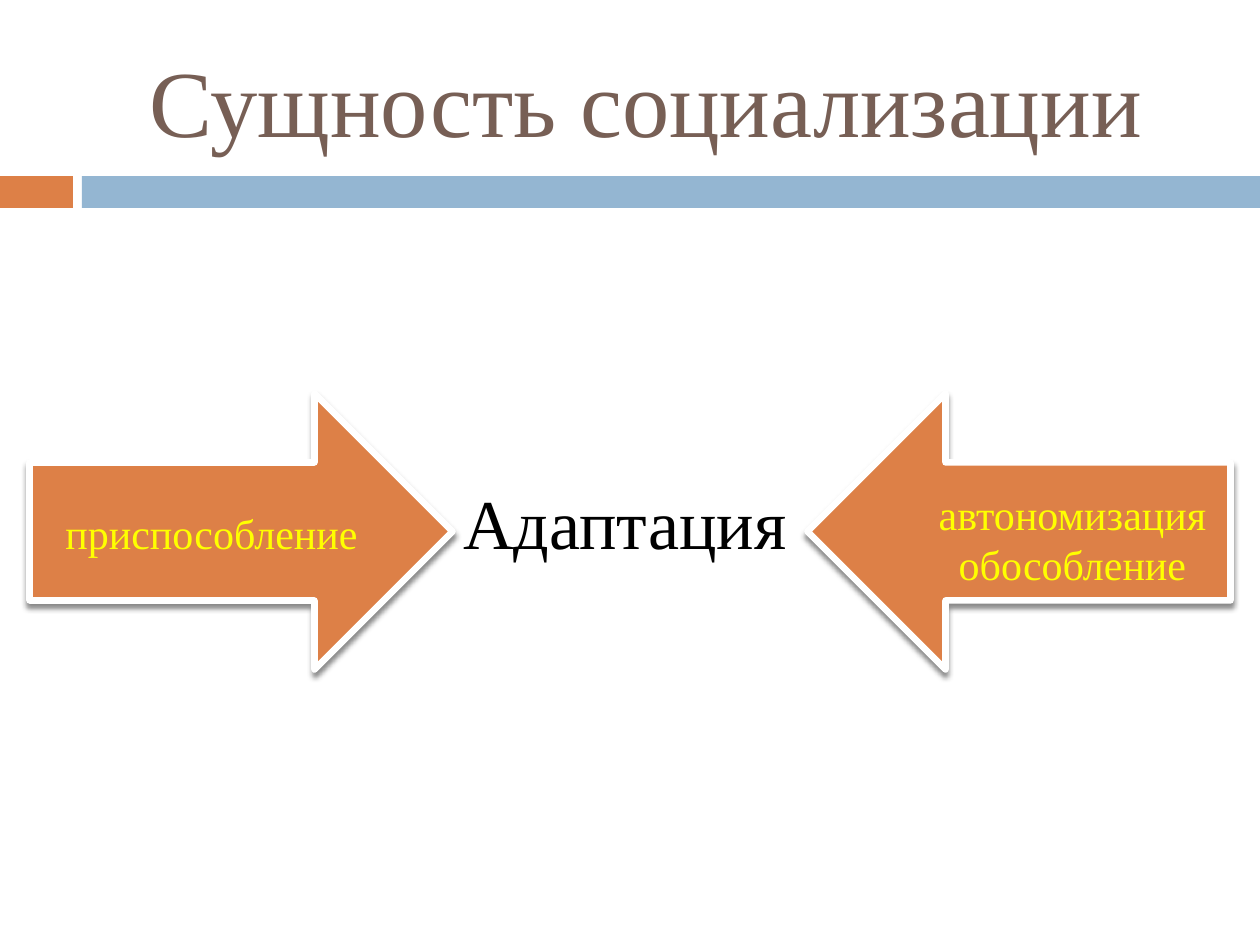
from lxml.etree import SubElement
from pptx import Presentation
from pptx.dml.color import RGBColor
from pptx.enum.shapes import MSO_SHAPE as Shape
from pptx.enum.text import MSO_ANCHOR as Anchor, MSO_AUTO_SIZE as AutoSize, PP_ALIGN as Align
from pptx.oxml.ns import qn
from pptx.util import Pt

PX = 914400 // 126
ORANGE = RGBColor(0xDD, 0x80, 0x47)
BLUE = RGBColor(0x94, 0xB6, 0xD2)
BROWN = RGBColor(0x77, 0x5F, 0x55)
YELLOW = RGBColor(0xFF, 0xFF, 0x00)
BLACK = RGBColor(0x00, 0x00, 0x00)
WHITE = RGBColor(0xFF, 0xFF, 0xFF)

prs = Presentation()
prs.slide_width, prs.slide_height = 1260 * PX, 945 * PX
slide = prs.slides.add_slide(prs.slide_layouts[6])


def add_filled(kind, box, color):
    shape = slide.shapes.add_shape(kind, *(n * PX for n in box))
    shape.shadow.inherit = False
    shape.fill.solid()
    shape.fill.fore_color.rgb = color
    shape.line.fill.background()
    return shape


def drop_shadow(shape):
    """Put a soft black shadow straight below the shape."""
    effects = shape._element.spPr.find(qn("a:effectLst"))
    shadow = SubElement(effects, qn("a:outerShdw"), blurRad=str(Pt(3)), dist=str(Pt(2.4)),
                        dir="5400000", rotWithShape="0")
    black = SubElement(shadow, qn("a:srgbClr"), val="000000")
    SubElement(black, qn("a:alpha"), val="45000")


# Header band
add_filled(Shape.RECTANGLE, (0, 176, 73, 32), ORANGE)
add_filled(Shape.RECTANGLE, (82, 176, 1178, 32), BLUE)

# Two forces pointing at the centre
for left, rotation in ((103, 270), (881, 90)):
    force = add_filled(Shape.DOWN_ARROW, (left, 320, 276, 423), ORANGE)
    force.rotation = rotation
    force.line.color.rgb = WHITE
    force.line.width = Pt(3.75)
    drop_shadow(force)

# Title, central idea and arrow captions
captions = [
    ("Сущность социализации", (84, 32, 1124, 136), 54, BROWN, Anchor.MIDDLE, AutoSize.NONE),
    ("Адаптация", (443, 473, 364, 97), 40, BLACK, Anchor.TOP, AutoSize.SHAPE_TO_FIT_TEXT),
    ("приспособление", (49, 501, 325, 63), 24, YELLOW, Anchor.TOP, AutoSize.SHAPE_TO_FIT_TEXT),
    ("автономизация\nобособление", (925, 482, 295, 115), 24, YELLOW, Anchor.TOP,
     AutoSize.SHAPE_TO_FIT_TEXT),
]
for wording, box, size, color, anchor, fit in captions:
    frame = slide.shapes.add_textbox(*(n * PX for n in box)).text_frame
    frame.text = wording
    for name, value in {"word_wrap": True, "vertical_anchor": anchor, "auto_size": fit}.items():
        setattr(frame, name, value)
    for line in frame.paragraphs:
        line.alignment = Align.CENTER
        font = line.runs[0].font
        for name, value in {"name": "Times New Roman", "size": Pt(size)}.items():
            setattr(font, name, value)
        font.color.rgb = color

prs.save("out.pptx")
